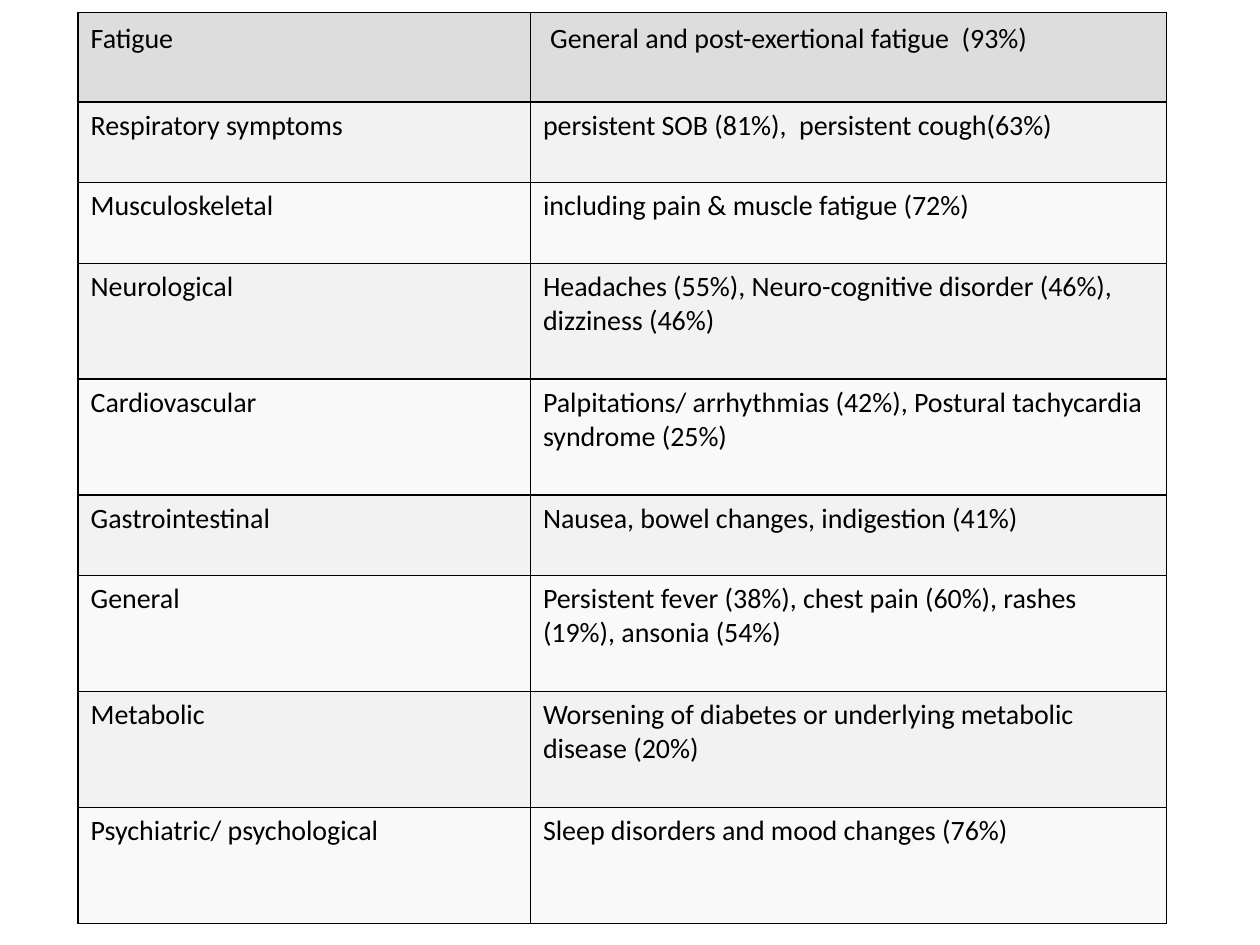
from lxml import etree
from pptx import Presentation
from pptx.dml.color import RGBColor
from pptx.oxml.ns import qn
from pptx.util import Inches, Pt

BLACK = RGBColor(0x00, 0x00, 0x00)
HEADER_GRAY = RGBColor(0xDD, 0xDD, 0xDD)
BAND_GRAYS = (RGBColor(0xF2, 0xF2, 0xF2), RGBColor(0xF9, 0xF9, 0xF9))
FONT = "Calibri"
BLANK_LAYOUT = 6
BORDER_WIDTH = Pt(1)
COLUMN_WIDTHS = (3.59, 5.05)
HEADER_HEIGHT, SHORT_HEIGHT, TALL_HEIGHT = 0.71, 0.64, 0.92

HEADER = (
    (("Fatigue", 16), (" ", 18)),
    ((" ", 18), ("General and post-exertional fatigue  (93%)", 16)),
)
SYMPTOMS = (
    ("Respiratory symptoms", "persistent SOB (81%),  persistent cough(63%)", SHORT_HEIGHT),
    ("Musculoskeletal", "including pain & muscle fatigue (72%)", SHORT_HEIGHT),
    ("Neurological", "Headaches (55%), Neuro-cognitive disorder (46%), dizziness (46%)", TALL_HEIGHT),
    ("Cardiovascular", "Palpitations/ arrhythmias (42%), Postural tachycardia syndrome (25%)", TALL_HEIGHT),
    ("Gastrointestinal", "Nausea, bowel changes, indigestion (41%)", SHORT_HEIGHT),
    ("General", "Persistent fever (38%), chest pain (60%), rashes (19%), ansonia (54%)", TALL_HEIGHT),
    ("Metabolic", "Worsening of diabetes or underlying metabolic disease (20%)", TALL_HEIGHT),
    ("Psychiatric/ psychological", "Sleep disorders and mood changes (76%)", TALL_HEIGHT),
)


def add_text(paragraph, text, size=16, color=BLACK, font=FONT):
    """Append a formatted run to a paragraph."""
    run = paragraph.add_run()
    run.text = text
    run.font.size = Pt(size)
    run.font.name = font
    run.font.color.rgb = color


def set_borders(cell, color=BLACK, width=BORDER_WIDTH):
    """Draw a solid line on all four sides of a cell."""
    properties = cell._tc.get_or_add_tcPr()
    for index, side in enumerate(("a:lnL", "a:lnR", "a:lnT", "a:lnB")):
        line = etree.Element(qn(side), w=str(int(width)))
        fill = etree.SubElement(line, qn("a:solidFill"))
        etree.SubElement(fill, qn("a:srgbClr"), val=str(color))
        properties.insert(index, line)


def fill_cell(cell, runs, color):
    """Give a cell its text runs, background and borders."""
    for text, size in runs:
        add_text(cell.text_frame.paragraphs[0], text, size=size)
    cell.fill.solid()
    cell.fill.fore_color.rgb = color
    set_borders(cell)


def add_symptom_table(slide):
    """Add the table of symptoms by body system."""
    rows = [(HEADER, HEADER_HEIGHT, HEADER_GRAY)]
    for index, (system, symptoms, height) in enumerate(SYMPTOMS):
        rows.append((([(system, 16)], [(symptoms, 16)]), height, BAND_GRAYS[index % 2]))
    total_height = sum(height for _, height, _ in rows)
    table = slide.shapes.add_table(
        len(rows), len(COLUMN_WIDTHS), Inches(0.62), Inches(0.1),
        Inches(sum(COLUMN_WIDTHS)), Inches(total_height),
    ).table
    for column, width in zip(table.columns, COLUMN_WIDTHS):
        column.width = Inches(width)
    for row, (contents, height, color) in zip(table.rows, rows):
        row.height = Inches(height)
        for cell, runs in zip(row.cells, contents):
            fill_cell(cell, runs, color)


def main():
    """Build and save the presentation."""
    presentation = Presentation()
    presentation.slide_width = Inches(10)
    presentation.slide_height = Inches(7.5)
    slide = presentation.slides.add_slide(presentation.slide_layouts[BLANK_LAYOUT])
    add_symptom_table(slide)
    presentation.save("out.pptx")


if __name__ == "__main__":
    main()
